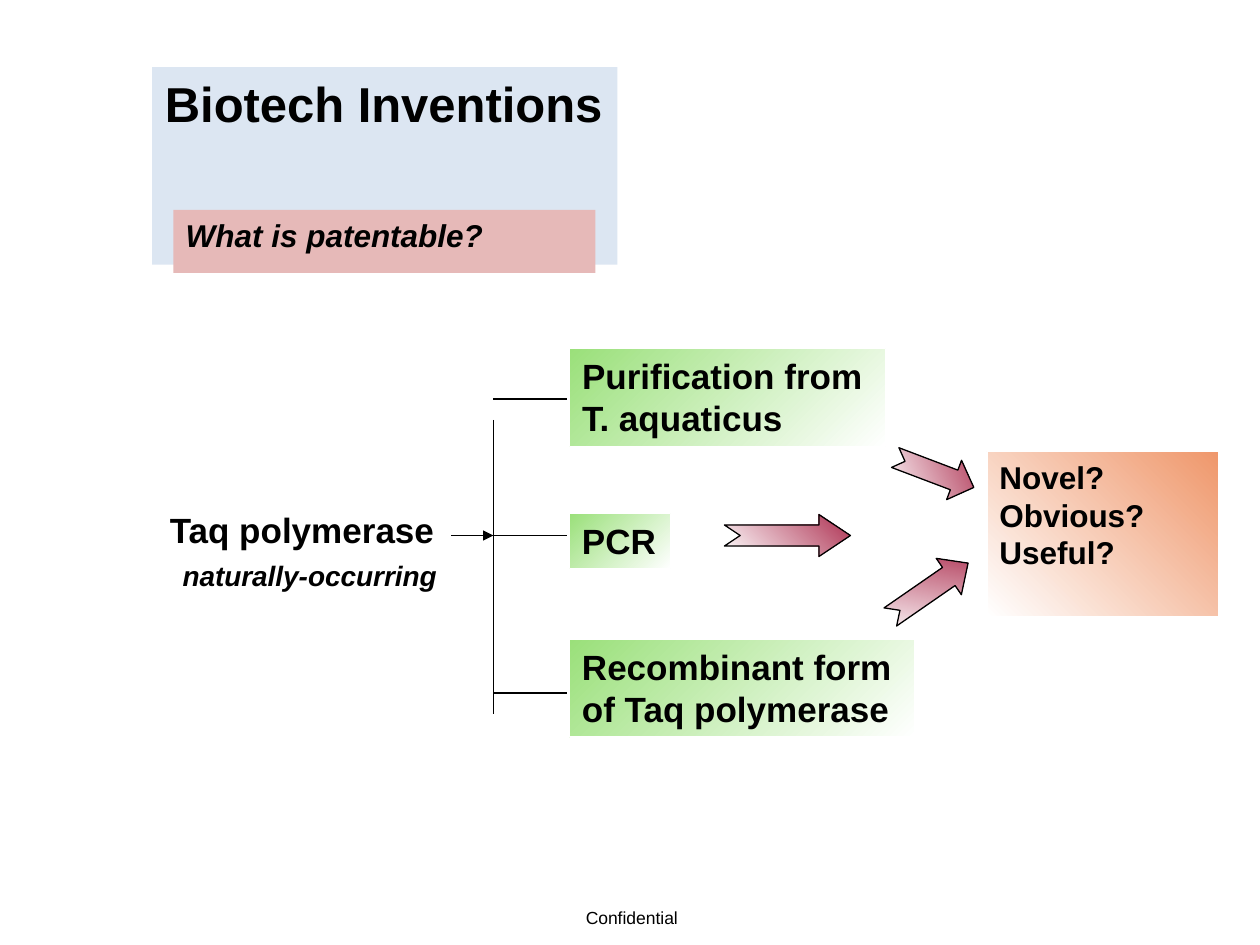
"""Build the Biotech Inventions slide."""
from pptx import Presentation
from pptx import util as u
from pptx.dml.color import RGBColor
from pptx.enum import shapes, text
from pptx.oxml.ns import qn
from lxml import etree

COLS, ROWS = 120, 90
WIDTH, HEIGHT = u.Inches(10), u.Inches(7.5)
BLACK, WHITE = "000000", "FFFFFF"
GREEN, ORANGE, CRIMSON = "9AE07A", "EF976B", "AD2F50"
FALLING, RISING = 315, 45


def color(value):
    """Turn a hex string into a colour."""
    return RGBColor.from_string(value)


def place(col, row):
    """Turn a grid position into slide lengths."""
    return round(col * WIDTH / COLS), round(row * HEIGHT / ROWS)


def set_gradient(fill, start, end, angle):
    """Fill with a two-stop linear gradient."""
    fill.gradient()
    fill.gradient_angle = angle
    for stop, value in zip(fill.gradient_stops, (start, end)):
        stop.color.rgb = color(value)


def set_line(line, value):
    """Draw a thin line in one colour."""
    line.color.rgb = color(value)
    line.width = u.Pt(0.75)


def write(sp, words, size, bold=True, italic=False, align=text.PP_ALIGN.LEFT):
    """Put formatted text into a shape that fits it."""
    tf = sp.text_frame
    tf.text = words
    tf.word_wrap = False
    tf.auto_size = text.MSO_AUTO_SIZE.SHAPE_TO_FIT_TEXT
    tf.vertical_anchor = text.MSO_ANCHOR.TOP
    for p in tf.paragraphs:
        p.alignment = align
        p.line_spacing = 1.0
        p.space_before = u.Pt(0)
        for r in p.runs:
            r.font.name = "Arial"
            r.font.size = u.Pt(size)
            r.font.bold = bold
            r.font.italic = italic
            r.font.color.rgb = color(BLACK)


def add_title(s, words, col, row, cols, rows):
    """Move and format the title placeholder."""
    sp = s.shapes.title
    sp.left, sp.top = place(col, row)
    sp.width, sp.height = place(cols, rows)
    sp.fill.solid()
    sp.fill.fore_color.rgb = color("DCE6F2")
    write(sp, words, 28)


def add_label(s, words, col, row, cols, rows, size, **style):
    """Add a text box on the grid."""
    sp = s.shapes.add_textbox(*place(col, row), *place(cols, rows))
    write(sp, words, size, **style)
    return sp


def add_gradient_box(s, words, col, row, cols, rows, size, stops, angle):
    """Add a text box with a gradient and a white outline."""
    sp = add_label(s, words, col, row, cols, rows, size)
    set_gradient(sp.fill, *stops, angle)
    set_line(sp.line, WHITE)


def add_rule(s, start, end, arrow=False):
    """Add a straight line between two grid points."""
    line = s.shapes.add_connector(
        shapes.MSO_CONNECTOR.STRAIGHT, *place(*start), *place(*end))
    set_line(line.line, BLACK)
    props = line._element.spPr
    if arrow:
        etree.SubElement(props.find(qn("a:ln")), qn("a:tailEnd"), type="triangle")
    etree.SubElement(props, qn("a:effectLst"))


def add_arrow(s, col, row, cols, rows, head, rotation):
    """Add a notched arrow with a gradient."""
    sp = s.shapes.add_shape(
        shapes.MSO_SHAPE.NOTCHED_RIGHT_ARROW, *place(col, row), *place(cols, rows))
    sp.shadow.inherit = False
    sp.adjustments[0] = 0.5
    sp.adjustments[1] = head
    sp.rotation = rotation
    set_gradient(sp.fill, WHITE, CRIMSON, RISING)
    set_line(sp.line, BLACK)


def main():
    """Build and save the slide."""
    prs = Presentation()
    prs.slide_width, prs.slide_height = WIDTH, HEIGHT
    s = prs.slides.add_slide(prs.slide_layouts[5])

    add_title(s, "Biotech Inventions", 14.5, 6.4, 44.3, 6.8)
    question = add_label(s, "What is patentable?", 16.5, 20, 40.2, 6, 18, italic=True)
    question.fill.solid()
    question.fill.fore_color.rgb = color("E6B9B8")
    add_label(s, "Taq polymerase", 15, 47.8, 27.8, 5.2, 20)
    add_label(s, "naturally-occurring", 16.2, 52.6, 27, 4.4, 16, italic=True)

    for words, row, cols, rows in (
            ("Purification from\nT. aquaticus", 33.2, 30.1, 9.3),
            ("PCR", 48.9, 9.6, 5.25),
            ("Recombinant form\nof Taq polymerase", 60.9, 32.9, 9.3)):
        add_gradient_box(s, words, 54.25, row, cols, rows, 20, (GREEN, WHITE), FALLING)
    add_gradient_box(s, "Novel?\nObvious?\nUseful?", 94, 43, 22.1, 15.7, 18,
                     (WHITE, ORANGE), RISING)

    trunk, middle = 47, 51
    add_rule(s, (trunk, 40), (trunk, 68))
    add_rule(s, (43, middle), (trunk, middle), arrow=True)
    for row in (38, middle, 66):
        add_rule(s, (trunk, row), (54, row))

    add_arrow(s, 85, 43, 8, 4, 0.5, 20.8)
    add_arrow(s, 69, 49, 12, 4, 0.75, 0)
    add_arrow(s, 84, 54.1, 9, 4.2, 0.53, 325.3)
    add_label(s, "Confidential ", 54.6, 85.8, 11.6, 3.2, 10, bold=False,
              align=text.PP_ALIGN.CENTER)
    prs.save("out.pptx")


if __name__ == "__main__":
    main()
